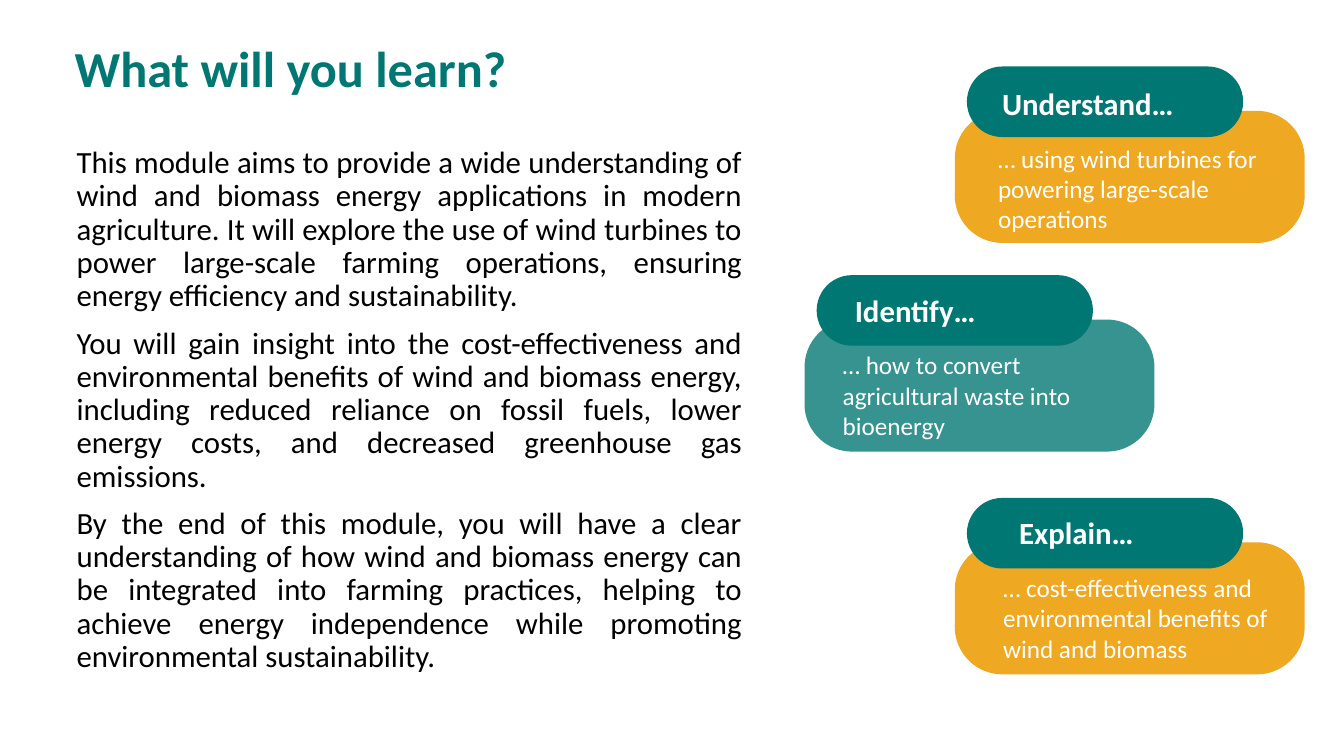
import pptx
import pptx.dml.color
import pptx.enum.shapes
import pptx.enum.text
import pptx.oxml.ns
import pptx.util
from lxml import etree
from dataclasses import dataclass

Inches = pptx.util.Inches
Align = pptx.enum.text.PP_ALIGN
qn = pptx.oxml.ns.qn

FONT = "Calibri"
COLORS = {"teal": "007772", "gold": "EEA821", "white": "FFFFFF", "black": "000000"}

TITLE = "What will you learn?"
BODY = [
    "This module aims to provide a wide understanding of wind and biomass energy "
    "applications in modern agriculture. It will explore the use of wind turbines to "
    "power large-scale farming operations, ensuring energy efficiency and sustainability.",
    "You will gain insight into the cost-effectiveness and environmental benefits of wind "
    "and biomass energy, including reduced reliance on fossil fuels, lower energy costs, "
    "and decreased greenhouse gas emissions.",
    "By the end of this module, you will have a clear understanding of how wind and "
    "biomass energy can be integrated into farming practices, helping to achieve energy "
    "independence while promoting environmental sustainability.",
]


@dataclass
class Box:
    left: float
    top: float
    width: float
    height: float

    def place(self) -> tuple:
        return tuple(Inches(n) for n in (self.left, self.top, self.width, self.height))


@dataclass
class Card:
    left: float
    top: float
    color: str
    alpha: int
    head: str
    head_box: Box
    note: str
    note_box: Box


CARDS = [
    Card(9.47, 1.1, "gold", 100, "Understand…", Box(9.84, 0.79, 2.74, 0.47),
         "… using wind turbines for powering large-scale operations",
         Box(9.8, 1.37, 3.21, 1.01)),
    Card(7.98, 3.17, "teal", 79, "Identify…", Box(8.38, 2.85, 2.22, 0.47),
         "… how to convert agricultural waste into bioenergy",
         Box(8.26, 3.42, 3.16, 1.01)),
    Card(9.47, 5.38, "gold", 100, "Explain…", Box(10.01, 5.05, 2.12, 0.47),
         "… cost-effectiveness and environmental benefits of wind and biomass",
         Box(9.85, 5.63, 2.85, 1.01)),
]


def rgb(name: str) -> pptx.dml.color.RGBColor:
    return pptx.dml.color.RGBColor.from_string(COLORS[name])


def write(shape, texts: list[str], size: int, color: str = "white", bold: bool = False,
          align=Align.LEFT, line: float = 1.0, gap: int = 0) -> None:
    """Fill a shape with plain paragraphs in one format."""
    frame = shape.text_frame
    frame.word_wrap = True
    frame.auto_size = pptx.enum.text.MSO_AUTO_SIZE.NONE
    frame.vertical_anchor = pptx.enum.text.MSO_ANCHOR.TOP
    for i, text in enumerate(texts):
        para = frame.paragraphs[0] if i == 0 else frame.add_paragraph()
        para.alignment = align
        para.line_spacing = line
        para.space_before = pptx.util.Pt(gap if i else 0)
        props = para._p.get_or_add_pPr()
        props.set("marL", "0")
        props.set("indent", "0")
        etree.SubElement(props, qn("a:buNone"))
        run = para.add_run()
        run.text = text
        run.font.name = FONT
        run.font.size = pptx.util.Pt(size)
        run.font.bold = bold
        run.font.color.rgb = rgb(color)


def fill_holder(shape, box: Box, texts: list[str], **style) -> None:
    """Move a placeholder and write in it."""
    shape.left, shape.top, shape.width, shape.height = box.place()
    write(shape, texts, **style)


def add_round(slide, box: Box, color: str, curve: float, alpha: int = 100) -> None:
    """Draw a rounded panel, see-through when alpha is below 100."""
    kind = pptx.enum.shapes.MSO_SHAPE.ROUNDED_RECTANGLE
    shape = slide.shapes.add_shape(kind, *box.place())
    shape.adjustments[0] = curve
    shape.shadow.inherit = False
    shape.line.fill.background()
    shape.fill.solid()
    shape.fill.fore_color.rgb = rgb(color)
    if alpha < 100:
        tint = shape._element.spPr.find(qn("a:solidFill"))[0]
        etree.SubElement(tint, qn("a:alpha")).set("val", str(alpha * 1000))


def add_card(slide, card: Card) -> None:
    """Draw a panel, the pill on its top edge, and both texts."""
    add_round(slide, Box(card.left, card.top, 3.47, 1.31), card.color, 0.36, card.alpha)
    add_round(slide, Box(card.left + 0.12, card.top - 0.44, 2.74, 0.7), "teal", 0.5)
    write(slide.shapes.add_textbox(*card.head_box.place()), [card.head], size=22, bold=True)
    write(slide.shapes.add_textbox(*card.note_box.place()), [card.note], size=18)


def main() -> None:
    deck = pptx.Presentation()
    deck.slide_width, deck.slide_height = Inches(13.33), Inches(7.5)
    slide = deck.slides.add_slide(deck.slide_layouts[1])

    # Title and module text
    fill_holder(slide.shapes.title, Box(0.64, 0.39, 8, 0.71), [TITLE],
                size=36, color="teal", bold=True, line=0.9)
    fill_holder(slide.placeholders[1], Box(0.66, 1.41, 6.8, 5.41), BODY,
                size=22, color="black", align=Align.JUSTIFY, line=0.9, gap=10)

    # Learning goals
    for card in CARDS:
        add_card(slide, card)

    deck.save("out.pptx")


if __name__ == "__main__":
    main()
